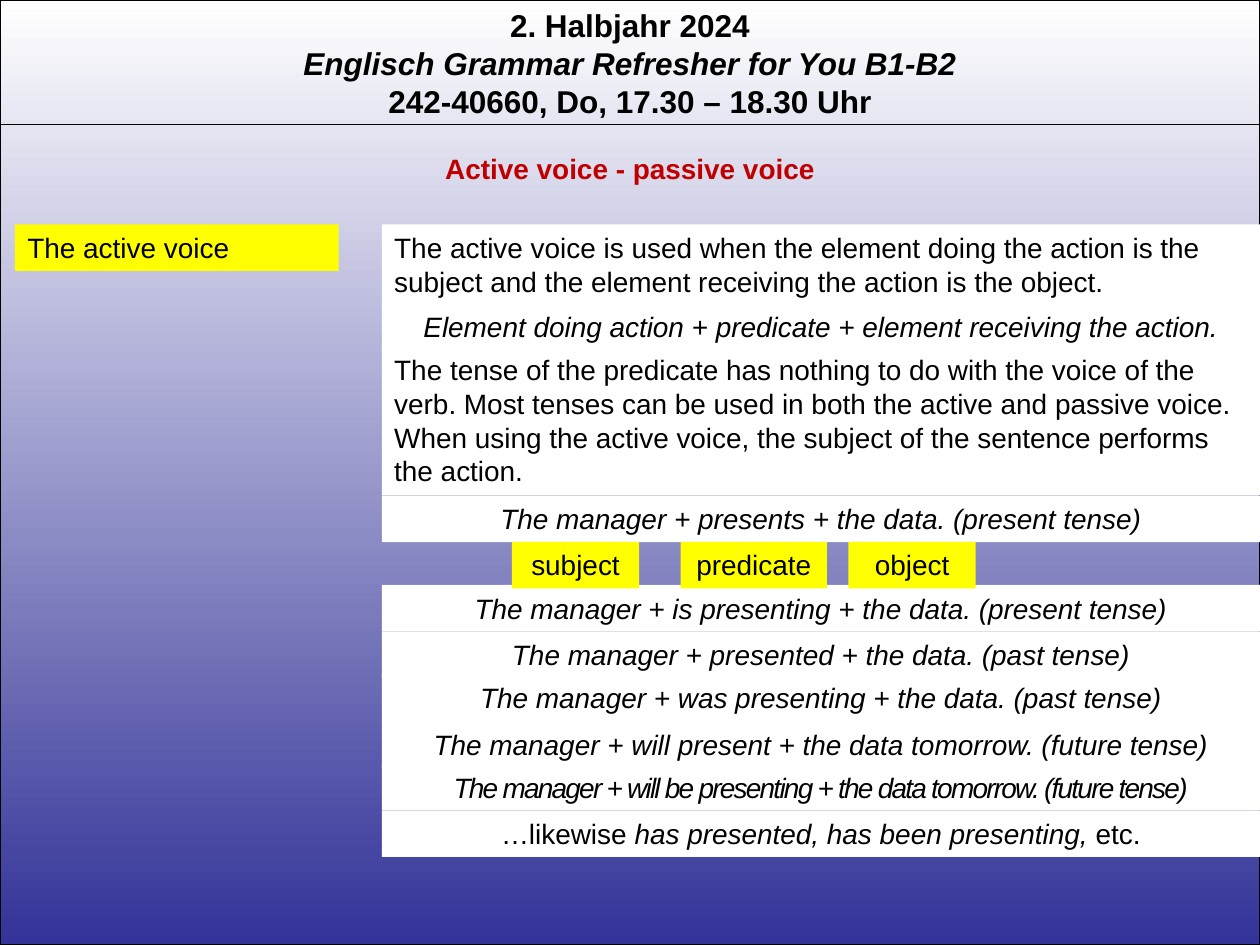
from dataclasses import dataclass
from itertools import accumulate

from lxml.etree import SubElement
from pptx import Presentation
from pptx.dml.color import RGBColor
from pptx.enum.shapes import MSO_CONNECTOR, MSO_SHAPE
from pptx.enum.text import MSO_ANCHOR, PP_ALIGN
from pptx.oxml.ns import qn
from pptx.util import Pt


@dataclass(frozen=True)
class Theme:
    font: str = "Arial"
    title_size: int = 18
    body_size: int = 16
    black: RGBColor = RGBColor(0, 0, 0)
    white: RGBColor = RGBColor(255, 255, 255)
    yellow: RGBColor = RGBColor(255, 255, 0)
    blue: RGBColor = RGBColor(0x33, 0x33, 0x99)
    red: RGBColor = RGBColor(0xC0, 0, 0)
    line_width: float = 0.75
    line_height: float = 26.64


THEME = Theme()
LEFT, CENTER = PP_ALIGN.LEFT, PP_ALIGN.CENTER

EXPLANATIONS = [
    (45.4, 46, LEFT, "The active voice is used when the element doing the action is the "
     "subject and the element receiving the action is the object."),
    (24.5, THEME.line_height, CENTER,
     "*Element doing action + predicate + element receiving the action."),
    (85.1, 85, LEFT, "The tense of the predicate has nothing to do with the voice of the "
     "verb. Most tenses can be used in both the active and passive voice. When using the "
     "active voice, the subject of the sentence performs the action."),
]
EXAMPLES = [
    (51.1, "*The manager + presents + the data. (present tense)"),
    (26.6, "*The manager + is presenting + the data. (present tense)"),
    (24.5, "*The manager + presented + the data. (past tense)"),
    (26.6, "*The manager + was presenting + the data. (past tense)"),
    (24.5, "*The manager + will present + the data tomorrow. (future tense)"),
    (26.6, "*The manager + will be presenting + the data tomorrow. (future tense)"),
    (0, "…likewise *has presented, has been presenting,* etc."),
]
ROWS = EXPLANATIONS + [
    (step, THEME.line_height, CENTER, text) for step, text in EXAMPLES
]
TIGHT_TEXT = "will be presenting"
LABELS = [("subject", 74.3, 72.7), ("predicate", 170.8, 83.5), ("object", 266.6, 72.7)]


def add_text(shapes, box, lines, size=THEME.body_size, color=THEME.black,
             align=CENTER, bold=False, fill=None):
    left, top, width, height = box
    shape = shapes.add_textbox(Pt(left), Pt(top), Pt(width), Pt(height))
    if fill is not None:
        shape.fill.solid()
        shape.fill.fore_color.rgb = fill
    frame = shape.text_frame
    frame.word_wrap = True
    frame.vertical_anchor = MSO_ANCHOR.TOP
    for index, line in enumerate(lines):
        para = frame.add_paragraph() if index else frame.paragraphs[0]
        para.alignment = align
        for part, text in enumerate(line.split("*")):
            if not text:
                continue
            span = para.add_run()
            span.text = text
            span.font.name = THEME.font
            span.font.size = Pt(size)
            span.font.bold = bold
            span.font.italic = part % 2 == 1
            span.font.color.rgb = color
    return shape


def add_background(page, box):
    left, top, width, height = box
    panel = page.shapes.add_shape(
        MSO_SHAPE.RECTANGLE, Pt(left), Pt(top), Pt(width), Pt(height))
    panel.shadow.inherit = False
    panel.fill.gradient()
    panel.fill.gradient_angle = 270
    for stop, color in zip(panel.fill.gradient_stops, (THEME.white, THEME.blue)):
        stop.color.rgb = color
    panel.line.color.rgb = THEME.black
    panel.line.width = Pt(THEME.line_width)


def add_header(page, box):
    left, top, width, height = box
    add_text(page.shapes, box, [
        "2. Halbjahr 2024",
        "*Englisch Grammar Refresher for You B1-B2",
        "242-40660, Do, 17.30 – 18.30 Uhr",
    ], size=THEME.title_size, bold=True)
    base = Pt(top + height - 1.4)
    rule = page.shapes.add_connector(
        MSO_CONNECTOR.STRAIGHT, Pt(left), base, Pt(left + width), base)
    rule.line.color.rgb = THEME.black
    rule.line.width = Pt(THEME.line_width)
    SubElement(rule.element.spPr, qn("a:effectLst"))


def add_rows(page, box):
    left, top, width, _ = box
    offsets = accumulate((row[0] for row in ROWS), initial=0)
    for offset, (_, height, align, text) in zip(offsets, ROWS):
        row = add_text(page.shapes, (left, top + offset, width, height), [text],
                       align=align, fill=THEME.white)
        if TIGHT_TEXT in text:
            for span in row.text_frame.paragraphs[0].runs:
                span.font._element.set("spc", "-100")


def add_labels(page, box):
    left, top, _, height = box
    group = page.shapes.add_group_shape()
    for text, offset, width in LABELS:
        add_text(group.shapes, (left + offset, top, width, height), [text],
                 fill=THEME.yellow)


def main():
    deck = Presentation()
    deck.slide_width, deck.slide_height = Pt(720), Pt(540)
    page = deck.slides.add_slide(deck.slide_layouts[6])
    add_background(page, (0, 0, 720, 540))
    add_header(page, (0, 0, 720, 72.7))
    add_text(page.shapes, (0, 82.8, 720, THEME.line_height),
             ["Active voice - passive voice"], color=THEME.red, bold=True)
    add_text(page.shapes, (8.6, 128.2, 185, THEME.line_height),
             ["The active voice"], align=LEFT, fill=THEME.yellow)
    add_rows(page, (218.2, 128.2, 501.8, 361.4))
    add_labels(page, (218.2, 309.6, 501.8, THEME.line_height))
    deck.save("out.pptx")


if __name__ == "__main__":
    main()
